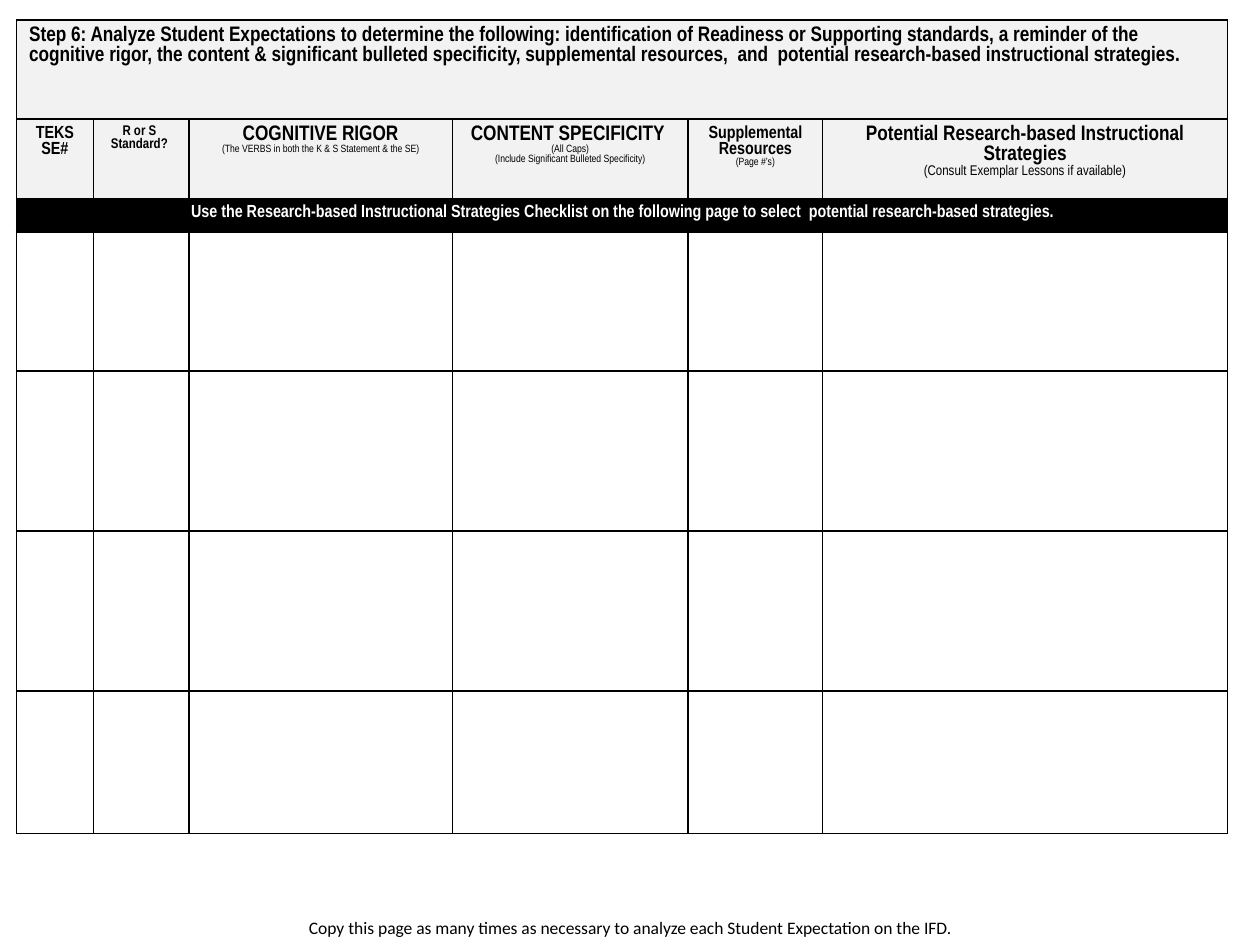
from lxml.etree import SubElement
from pptx import Presentation
from pptx.dml.color import RGBColor
from pptx.enum.text import PP_ALIGN as Align
from pptx.oxml.ns import qn
from pptx.util import Pt

COLORS = {"black": "000000", "white": "FFFFFF", "gray": "F2F2F2"}
COLUMN_WIDTHS = [43.9, 54.7, 150.5, 134.7, 77, 231.4]
ROW_HEIGHTS = [56.6, 45.4, 19.1, 79.4, 91.4, 91.4, 81.7]
STEP = (
    "Step 6: Analyze Student Expectations to determine the following: "
    "identification of Readiness or Supporting standards, a reminder of the "
    "cognitive rigor, the content & significant bulleted specificity, "
    "supplemental resources,  and  potential research-based instructional strategies."
)
CHECKLIST = (
    "Use the Research-based Instructional Strategies Checklist on the following "
    "page to select  potential research-based strategies."
)
FOOTER = "Copy this page as many times as necessary to analyze each Student Expectation on the IFD."
HEADERS = [
    [[("TEKS SE#", 10, True)]],
    [[("R or S  Standard? ", 8, True)]],
    [[("COGNITIVE RIGOR", 12, True)],
     [("(The VERBS in both the K & S Statement & the SE)", 6, False)]],
    [[("CONTENT SPECIFICITY  ", 12, True), ("(All Caps)", 6, False)],
     [("(Include Significant Bulleted Specificity)", 6, False)]],
    [[("Supplemental Resources", 10, True)], [("(Page #’s)", 6, False)]],
    [[("Potential Research-based Instructional Strategies", 12, True)],
     [("(Consult Exemplar Lessons if available)", 8, False)]],
]


def rgb(name):
    return RGBColor.from_string(COLORS[name])


def set_font(font, size, bold, color="black", name="Arial Narrow"):
    font.name = name
    font.size = Pt(size)
    font.bold = bold
    font.color.rgb = rgb(color)


def write(tf, paragraphs, align=Align.CENTER, color="black", name="Arial Narrow"):
    for i, runs in enumerate(paragraphs):
        p = tf.add_paragraph() if i else tf.paragraphs[0]
        p.alignment = align
        set_font(p.font, *runs[0][1:], color, name)
        for text, size, bold in runs:
            r = p.add_run()
            r.text = text
            set_font(r.font, size, bold, color, name)


def format_cell(cell, fill):
    tc_pr = cell._tc.get_or_add_tcPr()
    for side in ("a:lnL", "a:lnR", "a:lnT", "a:lnB"):
        line = SubElement(tc_pr, qn(side), w=str(Pt(1)))
        solid = SubElement(line, qn("a:solidFill"))
        SubElement(solid, qn("a:srgbClr"), val=COLORS["black"])
    cell.fill.solid()
    cell.fill.fore_color.rgb = rgb(fill)


def add_planning_table(s):
    frame = s.shapes.add_table(
        len(ROW_HEIGHTS), len(COLUMN_WIDTHS), Pt(9.4), Pt(11.5),
        Pt(sum(COLUMN_WIDTHS)), Pt(sum(ROW_HEIGHTS)))
    table = frame.table
    table.first_row = table.horz_banding = False
    for column, width in zip(table.columns, COLUMN_WIDTHS):
        column.width = Pt(width)
    row_fills = ["gray", "gray", "black"] + ["white"] * 4
    for row, height, fill in zip(table.rows, ROW_HEIGHTS, row_fills):
        row.height = Pt(height)
        for cell in row.cells:
            format_cell(cell, fill)
    for i in (0, 2):
        table.cell(i, 0).merge(table.cell(i, len(COLUMN_WIDTHS) - 1))
    write(table.cell(0, 0).text_frame, [[(STEP, 12, True)]], Align.LEFT)
    for cell, paragraphs in zip(table.rows[1].cells, HEADERS):
        write(cell.text_frame, paragraphs)
    write(table.cell(2, 0).text_frame, [[(CHECKLIST, 10, True)]], color="white")


def add_footer(s):
    tf = s.shapes.add_textbox(Pt(18), Pt(520.6), Pt(684), Pt(19.4)).text_frame
    tf.word_wrap = True
    write(tf, [[(FOOTER, 10, False)]], name="Calibri")


def main():
    prs = Presentation()
    prs.slide_width, prs.slide_height = Pt(720), Pt(540)
    s = prs.slides.add_slide(prs.slide_layouts[6])
    add_planning_table(s)
    add_footer(s)
    prs.save("out.pptx")


if __name__ == "__main__":
    main()
